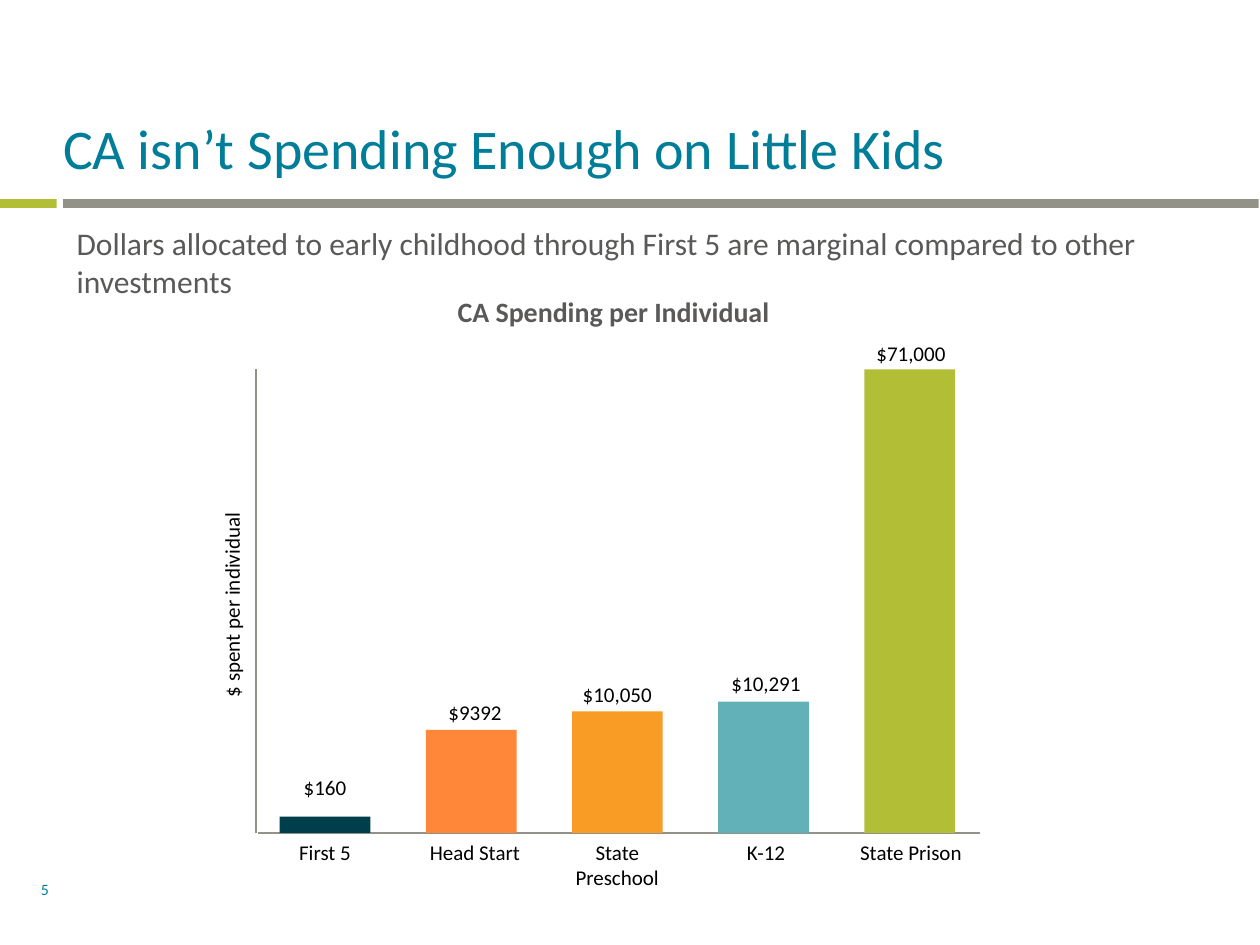
import pptx
import pptx.dml.color
import pptx.enum.shapes
import pptx.enum.text
import pptx.oxml.ns
import pptx.util
from lxml import etree

Pt = pptx.util.Pt
Align = pptx.enum.text.PP_ALIGN
Anchor = pptx.enum.text.MSO_ANCHOR
AutoSize = pptx.enum.text.MSO_AUTO_SIZE

COLOURS = {
    "teal": "007D99", "grey": "929288", "text": "5A5958", "black": "000000",
    "navy": "003E4C", "orange": "FF873A", "amber": "F99C25",
    "aqua": "62B0B8", "lime": "B1BE36",
}
BASELINE = 476
BAR_LEFT, BAR_STEP, BAR_WIDTH = 159.84, 83.52, 51.84
LABEL_WIDTH, LABEL_HEIGHT = 83.52, 21.8
# category, value label, colour, bar height, label left, value label top
BARS = [
    ("First 5", "$160", "navy", 9.4, 144, 439.2),
    ("Head Start", "$9392", "orange", 59, 229.7, 396),
    ("State Preschool", "$10,050", "amber", 69.5, 311, 385.9),
    ("K-12", "$10,291", "aqua", 75, 396, 379.4),
    ("State Prison", "$71,000", "lime", 265, 478.8, 190.8),
]


def colour(name):
    return pptx.dml.color.RGBColor.from_string(COLOURS[name])


def set_all(target, values):
    for name, value in values.items():
        setattr(target, name, value)


def write(shape, text, size, ink, align=Align.CENTER, bold=False, **frame_format):
    """Put one formatted paragraph into a shape's text frame."""
    frame = shape.text_frame
    set_all(frame, {"word_wrap": True, **frame_format})
    para = frame.paragraphs[0]
    para.alignment = align
    span = para.add_run()
    span.text = text
    set_all(span.font, {"name": "Calibri", "size": Pt(size), "bold": bold})
    span.font.color.rgb = colour(ink)
    return para


def add_text(page, place, text, size=12, ink="black", **text_format):
    box = page.shapes.add_textbox(*map(Pt, place))
    write(box, text, size, ink, **text_format)
    return box


def add_block(page, place, fill):
    block = page.shapes.add_shape(
        pptx.enum.shapes.MSO_SHAPE.RECTANGLE, *map(Pt, place))
    block.shadow.inherit = False
    block.fill.solid()
    block.fill.fore_color.rgb = colour(fill)
    block.line.fill.background()


def add_axis(page, *ends):
    axis = page.shapes.add_connector(
        pptx.enum.shapes.MSO_CONNECTOR.STRAIGHT, *map(Pt, ends))
    axis.line.width = Pt(1.5)
    axis.line.color.rgb = colour("grey")
    etree.SubElement(axis._element.spPr, pptx.oxml.ns.qn("a:effectLst"))


def add_title(page, text):
    title = page.shapes.title
    set_all(title, {"left": Pt(36), "top": Pt(26), "width": Pt(648), "height": Pt(78)})
    para = write(title, text, 32, "teal", align=Align.LEFT,
                 vertical_anchor=Anchor.BOTTOM, auto_size=AutoSize.NONE,
                 margin_left=0, margin_right=0, margin_top=0, margin_bottom=0)
    para.line_spacing = 0.9


def add_bars(page):
    for index, (_, _, fill, height, _, _) in enumerate(BARS):
        left = BAR_LEFT + index * BAR_STEP
        add_block(page, (left, BASELINE - height, BAR_WIDTH, height), fill)


def add_bar_labels(page):
    for category, value, _, _, left, value_top in BARS:
        for text, top in ((category, BASELINE), (value, value_top)):
            add_text(page, (left, top, LABEL_WIDTH, LABEL_HEIGHT), text)


def main():
    deck = pptx.Presentation()
    set_all(deck, {"slide_width": Pt(720), "slide_height": Pt(540)})
    page = deck.slides.add_slide(deck.slide_layouts[5])

    add_block(page, (36, 113.8, 683.3, 5), "grey")
    add_block(page, (0, 113.8, 32.4, 5), "lime")
    add_text(page, (20.2, 501.1, 10.8, 13.7), "5", 9, "teal",
             vertical_anchor=Anchor.MIDDLE,
             margin_left=0, margin_right=0, margin_top=0, margin_bottom=0)
    add_title(page, "CA isn’t Spending Enough on Little Kids")
    add_text(page, (36.7, 124.6, 668.9, 51),
             "Dollars allocated to early childhood through First 5 are "
             "marginal compared to other investments",
             18, "text", align=Align.LEFT)

    add_axis(page, 146.2, 211, 146.2, BASELINE)
    add_axis(page, 560.2, BASELINE, 147.6, BASELINE)
    add_bars(page)
    axis_title = add_text(page, (2.2, 334.8, 260.6, LABEL_HEIGHT), "$ spent per individual")
    axis_title.rotation = 270
    add_bar_labels(page)
    add_text(page, (133.2, 164.9, 434.9, 26.6), "CA Spending per Individual",
             16, "text", bold=True)

    deck.save("out.pptx")


if __name__ == "__main__":
    main()
